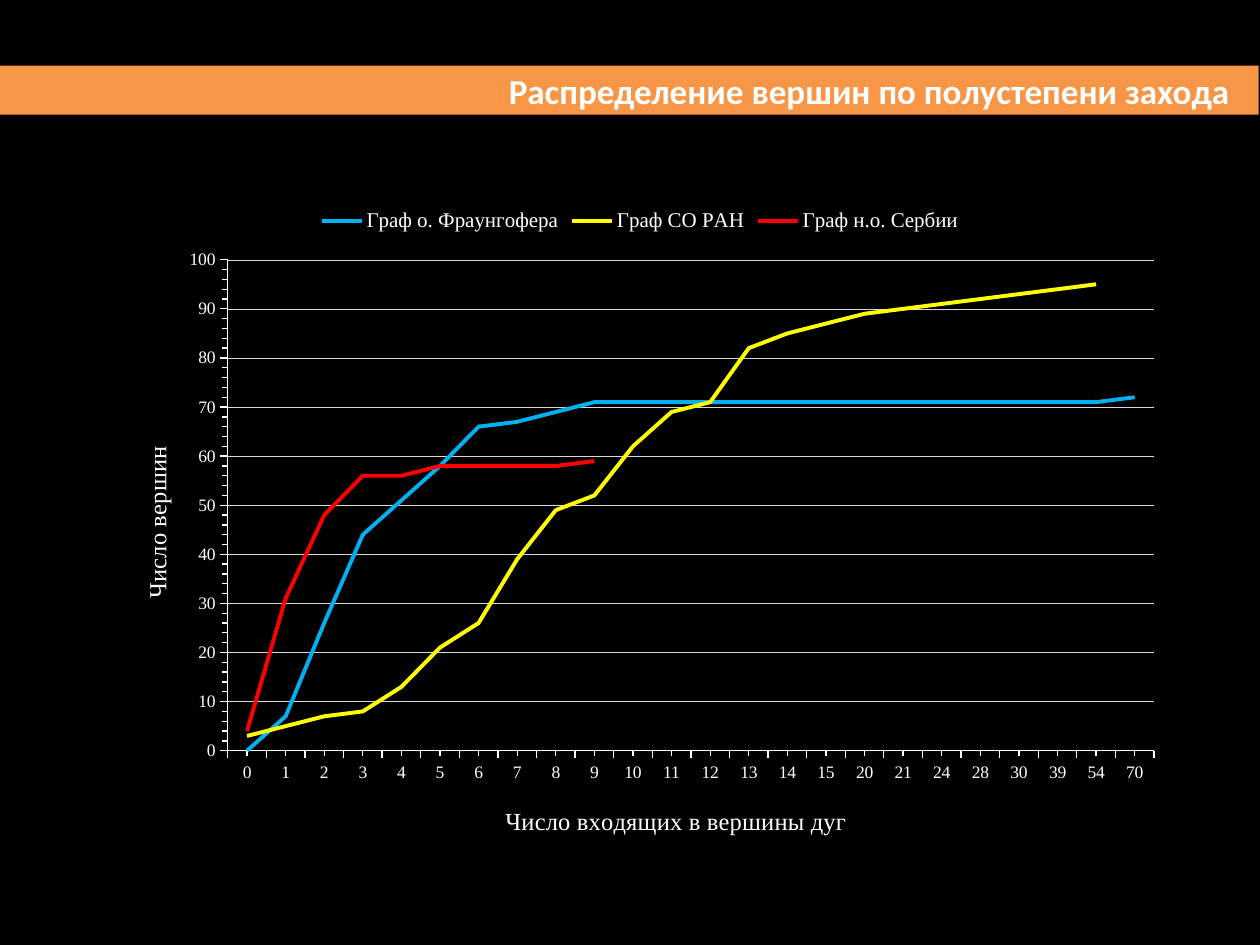
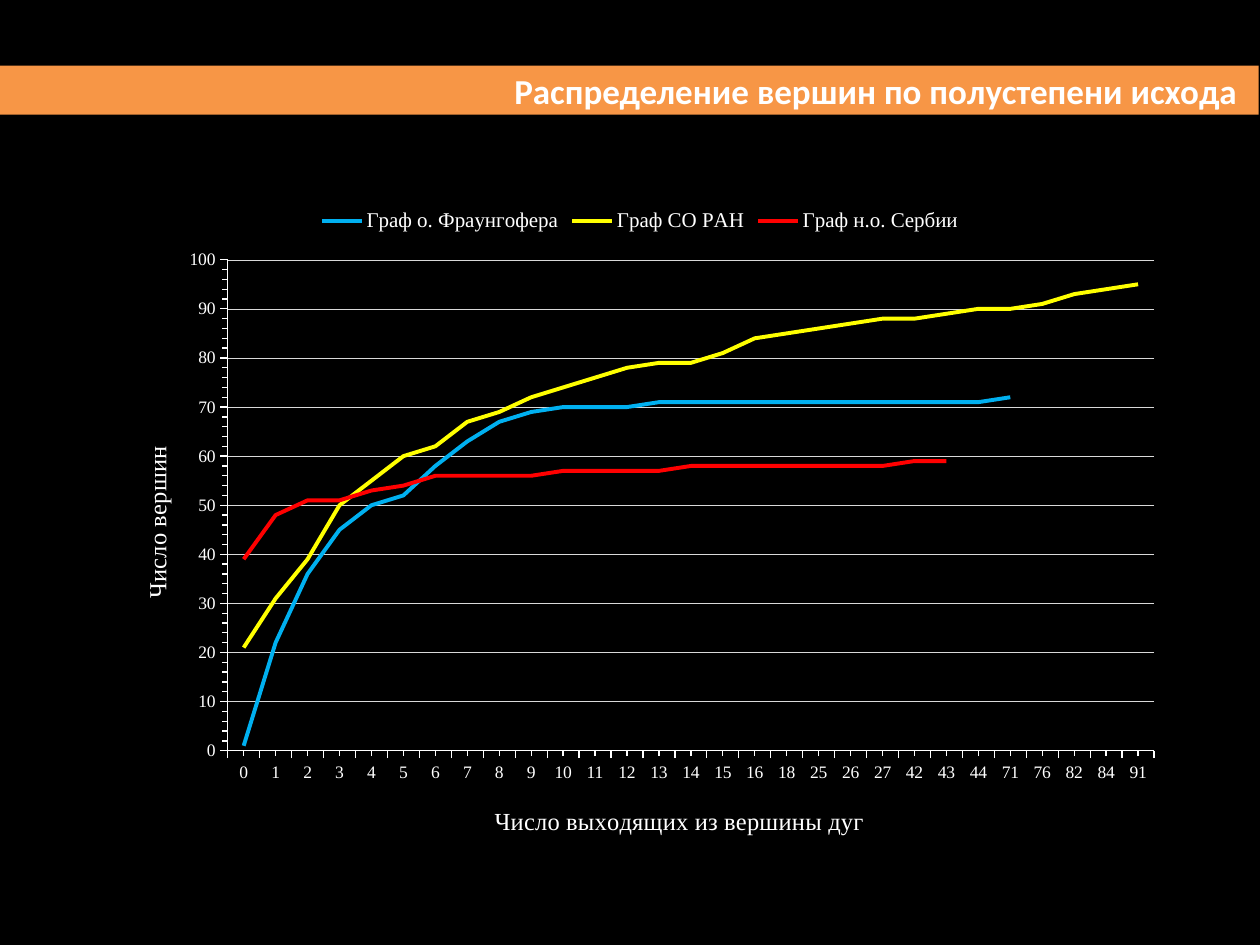
from lxml import etree
from pptx import Presentation
from pptx.chart.data import CategoryChartData
from pptx.dml.color import RGBColor
from pptx.enum.chart import XL_CHART_TYPE as ChartType
from pptx.enum.chart import XL_LEGEND_POSITION as LegendPos
from pptx.enum.chart import XL_TICK_MARK as Tick
from pptx.enum.shapes import MSO_SHAPE as Shape
from pptx.enum.text import MSO_ANCHOR as Anchor
from pptx.enum.text import PP_ALIGN as Align
from pptx.oxml import parse_xml
from pptx.oxml.ns import nsdecls, qn
from pptx.util import Inches, Pt

BLACK, WHITE, ORANGE, GRID = "000000", "FFFFFF", "F79646", "D9D9D9"
TITLE_FONT, CHART_FONT = "Calibri", "Times New Roman"
GRAPHS = [
    ("Граф о. Фраунгофера", "00B0F0"),
    ("Граф СО РАН", "FFFF00"),
    ("Граф н.о. Сербии", "FF0000"),
]
VALUE_TITLE = "Число вершин"

# value lists follow the order of GRAPHS
SLIDES = [
    {
        "title": "Распределение вершин по полустепени захода",
        "right_inset": 0.23,
        "axis_title": "Число входящих в вершины дуг",
        "axis_title_x": 0.37,
        "degrees": [*range(16), 20, 21, 24, 28, 30, 39, 54, 70],
        "values": [
            [0, 7, 26, 44, 51, 58, 66, 67, 69] + [71] * 14 + [72],
            [3, 5, 7, 8, 13, 21, 26, 39, 49, 52, 62, 69, 71, 82, 85, 87,
             89, 90, 91, 92, 93, 94, 95],
            [4, 31, 48, 56, 56, 58, 58, 58, 58, 59],
        ],
    },
    {
        "title": "Распределение вершин по полустепени исхода",
        "right_inset": 0.17,
        "axis_title": "Число выходящих из вершины дуг",
        "axis_title_x": 0.36,
        "degrees": [*range(17), 18, 25, 26, 27, 42, 43, 44, 71, 76, 82, 84, 91],
        "values": [
            [1, 22, 36, 45, 50, 52, 58, 63, 67, 69, 70, 70, 70] + [71] * 11 + [72],
            [21, 31, 39, 50, 55, 60, 62, 67, 69, 72, 74, 76, 78, 79, 79, 81,
             84, 85, 86, 87, 88, 88, 89, 90, 90, 91, 93, 94, 95],
            [39, 48, 51, 51, 53, 54] + [56] * 4 + [57] * 4 + [58] * 7 + [59] * 2,
        ],
    },
]


def rgb(hex_color):
    return RGBColor.from_string(hex_color)


def style_line(line, color, width):
    line.color.rgb = rgb(color)
    line.width = Pt(width)


def set_layout(parent, index, **fractions):
    """Place a chart part by fractions of the chart's size."""
    for old in parent.findall(qn("c:layout")):
        parent.remove(old)
    layout = parse_xml(f"<c:layout {nsdecls('c')}><c:manualLayout/></c:layout>")
    manual = layout[0]
    if "w" in fractions:
        etree.SubElement(manual, qn("c:layoutTarget")).set("val", "inner")
    for key in ("x", "y"):
        etree.SubElement(manual, qn(f"c:{key}Mode")).set("val", "edge")
    for key, value in fractions.items():
        etree.SubElement(manual, qn(f"c:{key}")).set("val", str(value))
    parent.insert(index, layout)


def solid_area(color):
    return parse_xml(
        f"<c:spPr {nsdecls('c', 'a')}><a:solidFill><a:srgbClr val='{color}'/>"
        "</a:solidFill><a:ln><a:noFill/></a:ln></c:spPr>")


def add_band(s, title, right_inset):
    band = s.shapes.add_shape(Shape.RECTANGLE, Inches(-0.01), Inches(0.52),
                              Inches(10), Inches(0.39))
    band.shadow.inherit = False
    band.fill.solid()
    band.fill.fore_color.rgb = rgb(ORANGE)
    band.line.fill.background()
    tf = band.text_frame
    tf.word_wrap = True
    tf.vertical_anchor = Anchor.MIDDLE
    tf.margin_top = tf.margin_bottom = 0
    tf.margin_right = Inches(right_inset)
    p = tf.paragraphs[0]
    p.text = title
    p.alignment = Align.RIGHT
    p.font.name, p.font.size, p.font.bold = TITLE_FONT, Pt(20), True
    p.font.color.rgb = rgb(WHITE)


def style_axis(axis, title, x, y):
    axis.major_tick_mark = axis.minor_tick_mark = Tick.OUTSIDE
    style_line(axis.format.line, WHITE, 0.75)
    tf = axis.axis_title.text_frame
    tf.text = title
    font = tf.paragraphs[0].font
    font.name, font.size, font.bold = CHART_FONT, Pt(14), False
    font.color.rgb = rgb(WHITE)
    set_layout(axis.axis_title._element, 1, x=x, y=y)


def add_degree_chart(s, content):
    data = CategoryChartData()
    data.categories = [str(degree) for degree in content["degrees"]]
    for (name, _), values in zip(GRAPHS, content["values"]):
        missing = len(content["degrees"]) - len(values)
        data.add_series(name, values + [None] * missing)
    chart = s.shapes.add_chart(ChartType.LINE, Inches(0.83), Inches(1.55),
                               Inches(8.5), Inches(5.28), data).chart
    chart.has_title = False
    chart.font.name, chart.font.size = CHART_FONT, Pt(10)
    chart.font.color.rgb = rgb(WHITE)

    chart.has_legend = True
    legend = chart.legend
    legend.position = LegendPos.TOP
    legend.include_in_layout = False
    legend.font.name, legend.font.size = CHART_FONT, Pt(12)
    legend.font.color.rgb = rgb(WHITE)

    for series, (_, color) in zip(chart.plots[0].series, GRAPHS):
        series.smooth = False
        style_line(series.format.line, color, 2.25)

    style_axis(chart.category_axis, content["axis_title"],
               content["axis_title_x"], 0.91)
    axis = chart.value_axis
    style_axis(axis, VALUE_TITLE, 0.03, 0.37)
    axis.axis_title._element.find(".//" + qn("a:bodyPr")).set("rot", "-5400000")
    axis.minimum_scale, axis.maximum_scale = 0, 100
    axis.major_unit, axis.minor_unit = 10, 2
    style_line(axis.major_gridlines.format.line, GRID, 0.25)

    chart_part = chart._chartSpace.find(qn("c:chart"))
    chart_part.addnext(solid_area(BLACK))
    plot_area = chart_part.find(qn("c:plotArea"))
    plot_area.append(solid_area(BLACK))
    set_layout(plot_area, 0, x=0.115, y=0.097, w=0.865, h=0.738)


def main():
    prs = Presentation()
    prs.slide_width, prs.slide_height = Inches(10), Inches(7.5)
    for content in SLIDES:
        s = prs.slides.add_slide(prs.slide_layouts[6])
        s.background.fill.solid()
        s.background.fill.fore_color.rgb = rgb(BLACK)
        add_band(s, content["title"], content["right_inset"])
        add_degree_chart(s, content)
    prs.save("out.pptx")


if __name__ == "__main__":
    main()
